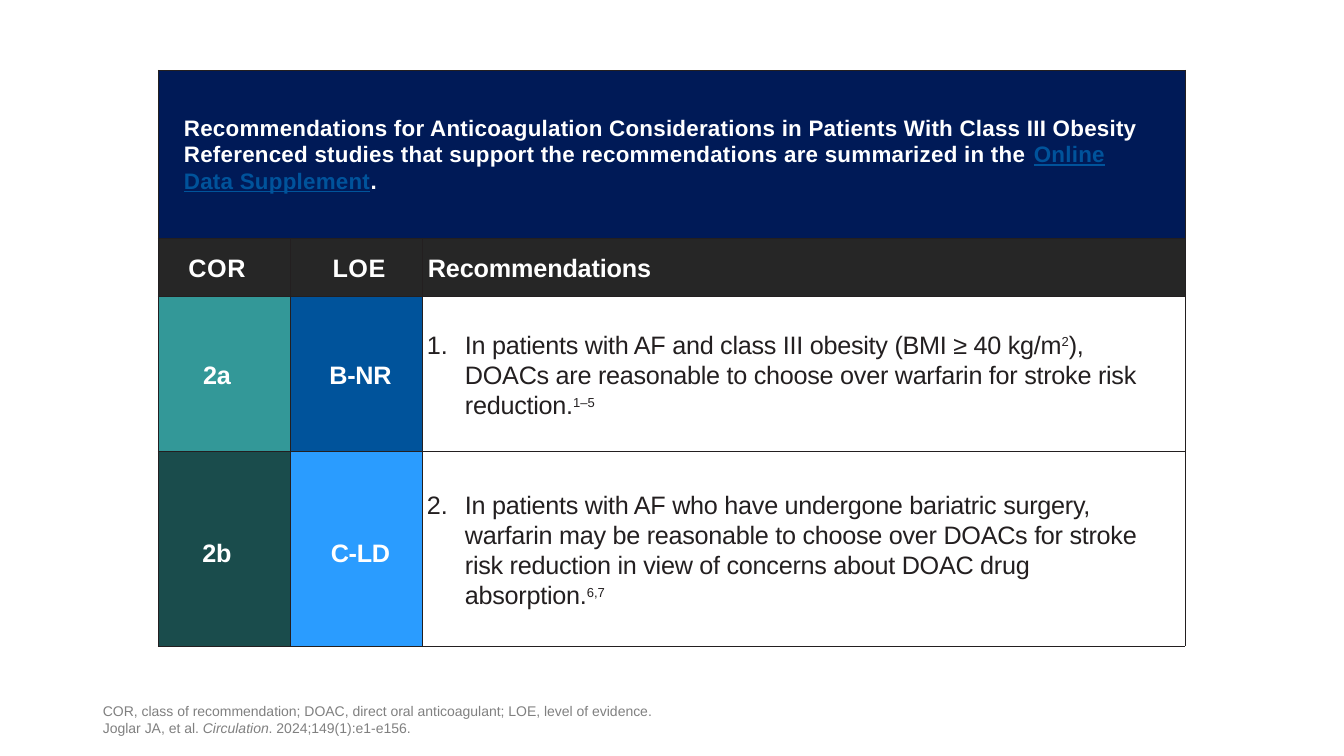
import dataclasses

import pptx
import pptx.dml.color
import pptx.enum.text
import pptx.oxml
import pptx.oxml.ns
import pptx.util

EMU = 914400 / 100.8
LEFT = pptx.enum.text.PP_ALIGN.LEFT
MID = pptx.enum.text.PP_ALIGN.CENTER


@dataclasses.dataclass(frozen=True)
class Theme:
    face: str = "Arial"
    white: str = "FFFFFF"
    ink: str = "231F20"
    gray: str = "808080"
    navy: str = "001A57"
    coal: str = "262626"
    blue: str = "00539B"
    sky: str = "2A9CFF"
    teal: str = "339898"
    pine: str = "1A4C4C"
    head: float = 16
    body: float = 18
    note: float = 10


THEME = Theme()


def px(count):
    return pptx.util.Emu(round(count * EMU))


def rgb(code):
    return pptx.dml.color.RGBColor.from_string(code)


def style(font, size, color, bold=False):
    font.name = THEME.face
    font.size = pptx.util.Pt(size)
    font.color.rgb = rgb(color)
    font.bold = bold


def add_run(para, text, gap=0):
    """Add a run; gap is the letter spacing in hundredths of a point."""
    run = para.add_run()
    run.text = text
    if gap:
        run._r.get_or_add_rPr().set("spc", str(gap))
    return run


def add_sup(para, text):
    run = add_run(para, text)
    run.font.size = pptx.util.Pt(THEME.head)
    run._r.get_or_add_rPr().set("baseline", "35000")


def indent(para, left, first=0):
    props = para._p.get_or_add_pPr()
    props.set("marL", str(px(left)))
    props.set("indent", str(px(first)))
    return props


def edge(cell):
    """Draw a hairline on all four sides of a cell."""
    props = cell._tc.get_or_add_tcPr()
    for place, side in enumerate("LRTB"):
        line = pptx.oxml.parse_xml(
            f'<a:ln{side} {pptx.oxml.ns.nsdecls("a")} w="3175"><a:solidFill>'
            f'<a:srgbClr val="{THEME.ink}"/></a:solidFill></a:ln{side}>')
        props.insert(place, line)


def set_cell(cell, fill, left=0, top=0, right=0):
    cell.fill.solid()
    cell.fill.fore_color.rgb = rgb(fill)
    cell.margin_left, cell.margin_top = px(left), px(top)
    cell.margin_right, cell.margin_bottom = px(right), 0
    cell.vertical_anchor = pptx.enum.text.MSO_ANCHOR.MIDDLE
    return cell.text_frame.paragraphs[0]


def label(cell, text, fill, top, left=0, right=0, align=MID, gap=0):
    para = set_cell(cell, fill, top=top, right=right)
    para.alignment = align
    indent(para, left)
    style(para.font, THEME.body, THEME.white, True)
    add_run(para, text, gap)


def advice(cell, start, parts):
    """Numbered advice; every second part is a superscript."""
    para = set_cell(cell, THEME.white, top=3, right=32)
    para.line_spacing = 1.07
    props = indent(para, 43, -38)
    mark = pptx.oxml.parse_xml(
        f'<a:buAutoNum {pptx.oxml.ns.nsdecls("a")} type="arabicPeriod" startAt="{start}"/>')
    props.append(mark)
    style(para.font, THEME.body, THEME.ink)
    for place, text in enumerate(parts):
        if place % 2:
            add_sup(para, text)
        else:
            add_run(para, text, -20)


def banner(grid):
    cell = grid.cell(0, 0)
    cell.merge(grid.cell(0, 2))
    first = set_cell(cell, THEME.navy, left=20, right=32)
    second = cell.text_frame.add_paragraph()
    for para in (first, second):
        para.line_spacing = 1.07
        indent(para, 6)
        style(para.font, THEME.head, THEME.white, True)
    add_run(first, "Recommendations for Anticoagulation Considerations in Patients "
                   "With Class III Obesity", 20)
    add_run(second, "Referenced studies that support the recommendations are "
                    "summarized in the ", 20)
    link = add_run(second, "Online Data Supplement", 20)
    link.font.color.rgb = rgb(THEME.blue)
    link.font.underline = True
    add_run(second, ".")


def add_grid(slide):
    wide, high = (132, 132, 763), (168, 58, 155, 195)
    grid = slide.shapes.add_table(
        len(high), len(wide), px(158), px(70), px(sum(wide)), px(sum(high))).table
    grid.first_row = grid.horz_banding = False
    for col, size in zip(grid.columns, wide):
        col.width = px(size)
    for row, size in zip(grid.rows, high):
        row.height = px(size)

    # Heading rows
    banner(grid)
    label(grid.cell(1, 0), "COR", THEME.coal, 4, right=14, gap=50)
    label(grid.cell(1, 1), "LOE", THEME.coal, 4, left=6, gap=40)
    label(grid.cell(1, 2), "Recommendations", THEME.coal, 4, left=6, align=LEFT, gap=-10)

    # Advice rows: class, its fill, level, its fill, top inset, text
    rows = (
        ("2a", THEME.teal, "B-NR", THEME.blue, 5,
         ("In patients with AF and class III obesity (BMI ≥ 40 kg/m", "2",
          "), DOACs are reasonable to choose over warfarin for stroke risk reduction.",
          "1–5")),
        ("2b", THEME.pine, "C-LD", THEME.sky, 11,
         ("In patients with AF who have undergone bariatric surgery, warfarin may be "
          "reasonable to choose over DOACs for stroke risk reduction in view of "
          "concerns about DOAC drug absorption.", "6,7")),
    )
    for num, (cor, dark, loe, light, top, parts) in enumerate(rows, 1):
        label(grid.cell(num + 1, 0), cor, dark, top, right=14, gap=-20)
        label(grid.cell(num + 1, 1), loe, light, top, left=9, gap=-20)
        advice(grid.cell(num + 1, 2), num, parts)

    for cell in grid.iter_cells():
        edge(cell)


def add_note(slide):
    frame = slide.shapes.add_textbox(px(93), px(701), px(1159), px(40)).text_frame
    frame.word_wrap = True
    frame.vertical_anchor = pptx.enum.text.MSO_ANCHOR.BOTTOM
    terms, cite = frame.paragraphs[0], frame.add_paragraph()
    for para in (terms, cite):
        style(para.font, THEME.note, THEME.gray)
    add_run(terms, "COR, class of recommendation; DOAC, direct oral anticoagulant; "
                   "LOE, level of evidence.")
    add_run(cite, "Joglar JA, et al. ")
    add_run(cite, "Circulation").font.italic = True
    add_run(cite, ". 2024;149(1):e1-e156.")


def main():
    deck = pptx.Presentation()
    deck.slide_width, deck.slide_height = px(1344), px(756)
    slide = deck.slides.add_slide(deck.slide_layouts[6])
    add_grid(slide)
    add_note(slide)
    deck.save("out.pptx")


if __name__ == "__main__":
    main()
